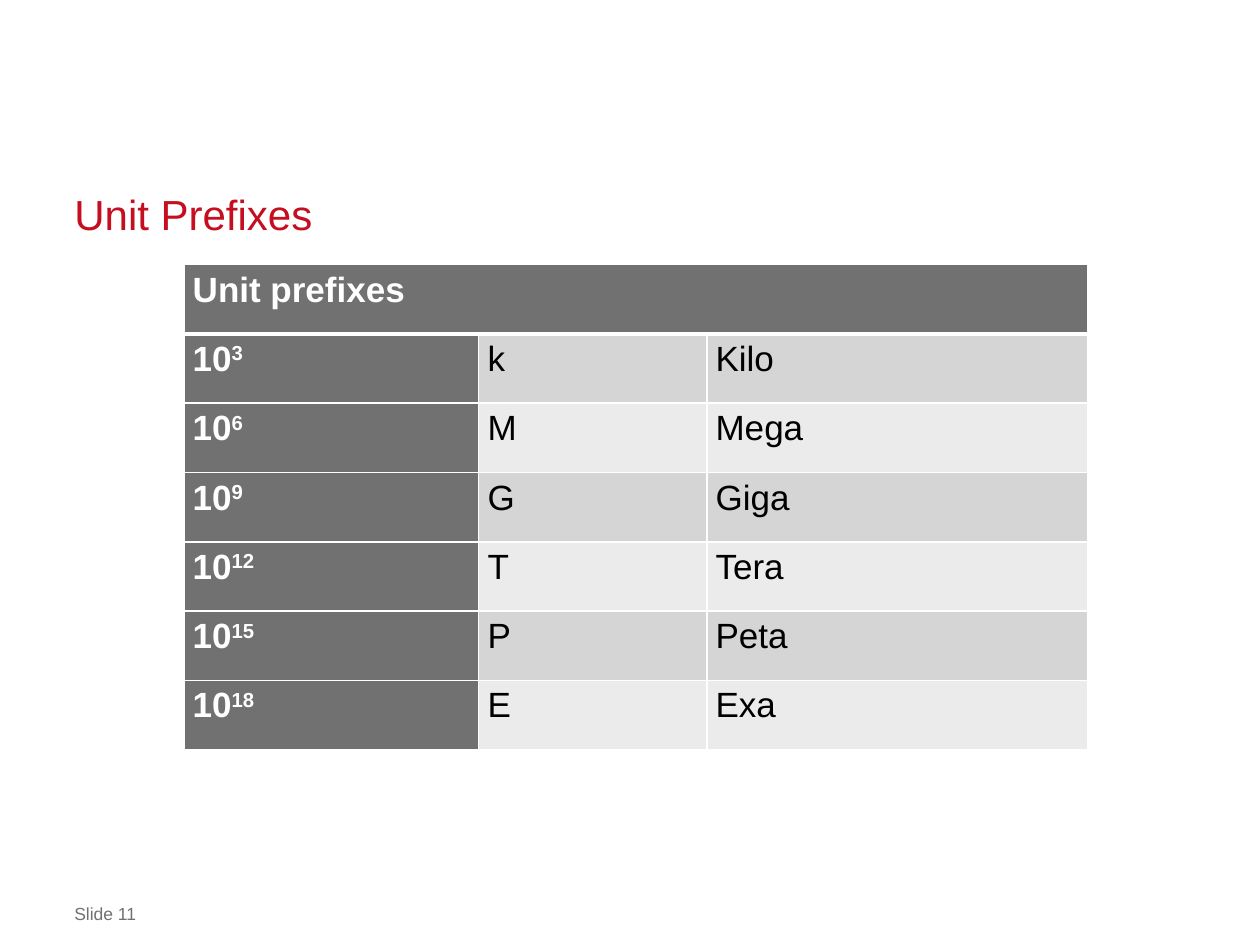
import pptx
import pptx.dml.color
import pptx.enum.text
import pptx.oxml
import pptx.oxml.ns
import pptx.util
from pptx.util import Inches

COLORS = {
    "title": "C50E1F",
    "dark": "717171",
    "band": "D5D5D5",
    "light": "EBEBEB",
    "white": "FFFFFF",
    "black": "000000",
}
PREFIXES = [
    ("3", "k", "Kilo"),
    ("6", "M", "Mega"),
    ("9", "G", "Giga"),
    ("12", "T", "Tera"),
    ("15", "P", "Peta"),
    ("18", "E", "Exa"),
]
COLUMN_WIDTHS = [2.34, 1.81, 3.02]
ROW_HEIGHT = 0.55


def rgb(name):
    return pptx.dml.color.RGBColor.from_string(COLORS[name])


def add_span(para, text, size=20, color="black", bold=False, raised=False):
    span = para.add_run()
    span.text = text
    span.font.name = "Arial"
    span.font.size = pptx.util.Pt(size)
    span.font.bold = bold
    span.font.color.rgb = rgb(color)
    if raised:
        span.font._element.set("baseline", "30000")


def clear_margins(frame):
    frame.margin_left = frame.margin_right = 0
    frame.margin_top = frame.margin_bottom = 0
    frame.word_wrap = True


def add_title(page, text):
    title = page.shapes.title
    title.left, title.top = Inches(0.59), Inches(1.51)
    title.width, title.height = Inches(8.82), Inches(0.39)
    frame = title.text_frame
    clear_margins(frame)
    frame.vertical_anchor = pptx.enum.text.MSO_ANCHOR.BOTTOM
    frame.auto_size = pptx.enum.text.MSO_AUTO_SIZE.SHAPE_TO_FIT_TEXT
    para = frame.paragraphs[0]
    para.alignment = pptx.enum.text.PP_ALIGN.LEFT
    para.line_spacing = pptx.util.Pt(30)
    add_span(para, text, size=24, color="title")


def add_footer(page, text):
    box = page.shapes.add_textbox(Inches(0.59), Inches(7.17), Inches(7.24), Inches(0.17))
    clear_margins(box.text_frame)
    add_span(box.text_frame.paragraphs[0], text, size=10, color="dark")


def set_borders(cell, top=1, bottom=1):
    properties = cell._tc.get_or_add_tcPr()
    for side, points in (("L", 1), ("R", 1), ("T", top), ("B", bottom)):
        properties.append(pptx.oxml.parse_xml(
            f'<a:ln{side} {pptx.oxml.ns.nsdecls("a")} w="{pptx.util.Pt(points)}">'
            f'<a:solidFill><a:srgbClr val="{COLORS["white"]}"/></a:solidFill></a:ln{side}>'
        ))


def format_cell(cell, fill, top=1, bottom=1):
    set_borders(cell, top, bottom)
    cell.fill.solid()
    cell.fill.fore_color.rgb = rgb(fill)
    cell.margin_left = cell.margin_right = Inches(0.07)
    cell.margin_top = cell.margin_bottom = 0
    para = cell.text_frame.paragraphs[0]
    para.alignment = pptx.enum.text.PP_ALIGN.LEFT
    para.line_spacing = 1.15
    return para


def add_prefix_table(page):
    row_count = len(PREFIXES) + 1
    table = page.shapes.add_table(
        row_count, len(COLUMN_WIDTHS), Inches(1.46), Inches(2.1),
        Inches(sum(COLUMN_WIDTHS)), Inches(ROW_HEIGHT * row_count),
    ).table
    for column, width in zip(table.columns, COLUMN_WIDTHS):
        column.width = Inches(width)
    for row in table.rows:
        row.height = Inches(ROW_HEIGHT)

    header = [format_cell(cell, "dark", bottom=3) for cell in table.rows[0].cells]
    table.cell(0, 0).merge(table.cell(0, len(COLUMN_WIDTHS) - 1))
    add_span(header[0], "Unit prefixes", color="white", bold=True)

    for index, (exponent, symbol, name) in enumerate(PREFIXES, start=1):
        top = 3 if index == 1 else 1
        power = format_cell(table.cell(index, 0), "dark", top=top)
        add_span(power, "10", color="white", bold=True)
        add_span(power, exponent, color="white", bold=True, raised=True)
        fill = "band" if index % 2 else "light"
        for column, text in enumerate((symbol, name), start=1):
            add_span(format_cell(table.cell(index, column), fill, top=top), text)


def main():
    deck = pptx.Presentation()
    deck.slide_width, deck.slide_height = Inches(10), Inches(7.5)
    page = deck.slides.add_slide(deck.slide_layouts[5])
    add_footer(page, "Slide 11")
    add_prefix_table(page)
    add_title(page, "Unit Prefixes")
    deck.save("out.pptx")


if __name__ == "__main__":
    main()
